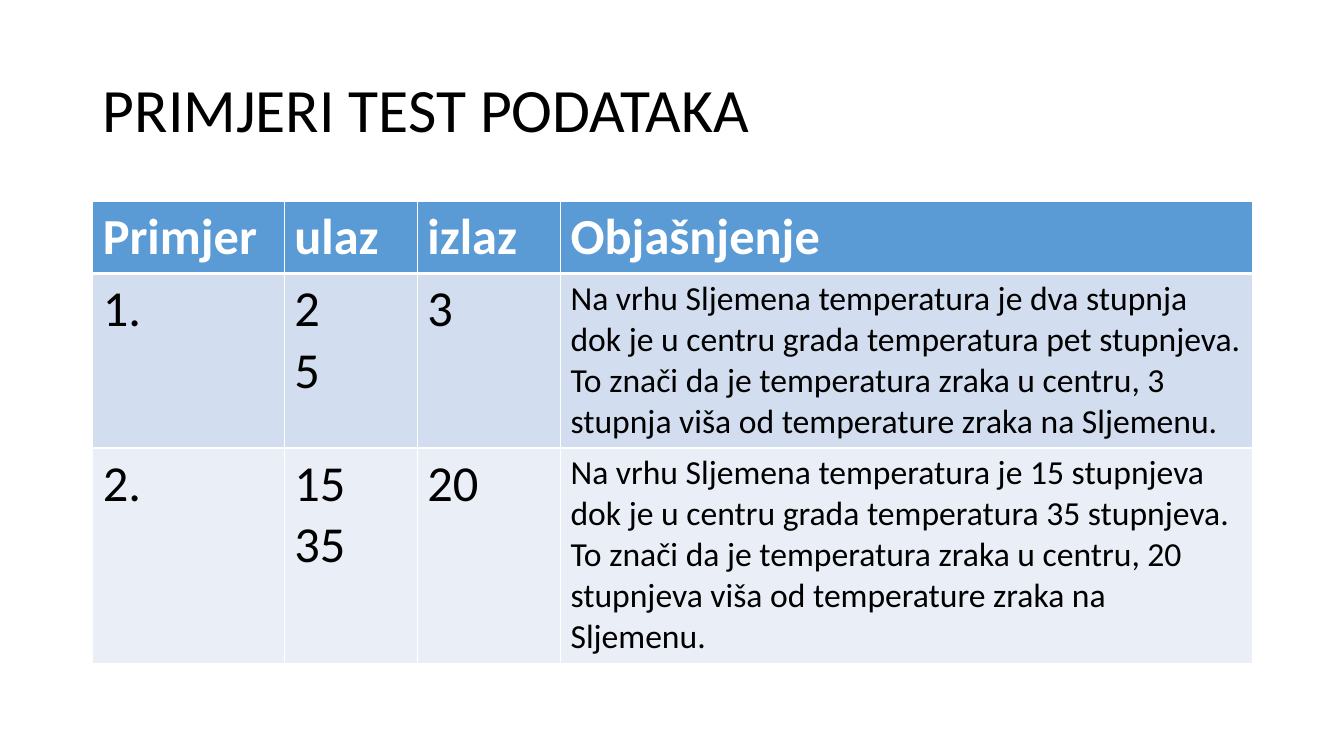
from lxml import etree
from pptx import Presentation
from pptx import util as u
from pptx.dml import color
from pptx.enum import text
from pptx.oxml import ns

COLORS = {
    "ink": "000000",
    "paper": "FFFFFF",
    "header": "5B9BD5",
    "odd": "D2DEEF",
    "even": "EAEFF7",
}
FONT = "Calibri"
SLIDE_SIZE = (13.33, 7.5)
TITLE_BOX = (0.069, 0.053, 0.863, 0.193)
TABLE_BOX = (0.069, 0.267, 0.863, 0.609)
COLUMN_WIDTHS = [1.9, 1.32, 1.42, 6.86]
ROW_HEIGHTS = [0.71, 1.73, 2.13]
EXPLANATION = (
    "Na vrhu Sljemena temperatura je {} dok je u centru grada temperatura {}. "
    "To znači da je temperatura zraka u centru, {} viša od temperature zraka na Sljemenu."
)
ROWS = [
    ["Primjer", "ulaz", "izlaz", "Objašnjenje"],
    ["1.", "2\n5", "3",
     EXPLANATION.format("dva stupnja", "pet stupnjeva", "3 stupnja")],
    ["2.", "15\n35", "20",
     EXPLANATION.format("15 stupnjeva", "35 stupnjeva", "20 stupnjeva")],
]


def rgb(name):
    return color.RGBColor.from_string(COLORS[name])


class SlideBuilder:
    def __init__(self, presentation):
        self.width = presentation.slide_width
        self.height = presentation.slide_height
        self.slide = presentation.slides.add_slide(presentation.slide_layouts[5])

    def box(self, shares):
        sizes = (self.width, self.height) * 2
        return [round(share * size) for share, size in zip(shares, sizes)]

    def fill_text(self, frame, content, ink, paragraph_format=None, **font_format):
        frame.text = content
        for paragraph in frame.paragraphs:
            for name, value in (paragraph_format or {}).items():
                setattr(paragraph, name, value)
            for run in paragraph.runs:
                for name, value in {"name": FONT, **font_format}.items():
                    setattr(run.font, name, value)
                run.font.color.rgb = rgb(ink)

    def title(self, content, shares):
        shape = self.slide.shapes.title
        for name, value in zip(("left", "top", "width", "height"), self.box(shares)):
            setattr(shape, name, value)
        frame = shape.text_frame
        frame_format = {
            "word_wrap": True,
            "auto_size": text.MSO_AUTO_SIZE.NONE,
            "vertical_anchor": text.MSO_ANCHOR.MIDDLE,
        }
        for name, value in frame_format.items():
            setattr(frame, name, value)
        paragraph_format = {"alignment": text.PP_ALIGN.LEFT, "line_spacing": 0.9}
        self.fill_text(frame, content, "ink", paragraph_format, size=u.Pt(44))

    def borders(self, cell, widths):
        properties = cell._tc.get_or_add_tcPr()
        for side, width in widths.items():
            line = etree.SubElement(properties, ns.qn(f"a:ln{side}"), w=str(u.Pt(width)))
            fill = etree.SubElement(line, ns.qn("a:solidFill"))
            etree.SubElement(fill, ns.qn("a:srgbClr"), val=COLORS["paper"])

    def table(self, rows, shares, column_widths, row_heights):
        frame = self.slide.shapes.add_table(len(rows), len(rows[0]), *self.box(shares))
        table = frame.table
        for column, width in zip(table.columns, column_widths):
            column.width = u.Inches(width)
        for row, height in zip(table.rows, row_heights):
            row.height = u.Inches(height)
        for i, contents in enumerate(rows):
            header = i == 0
            fill = "header" if header else ("even", "odd")[i % 2]
            for j, content in enumerate(contents):
                cell = table.cell(i, j)
                self.borders(cell, {"L": 1, "R": 1, "T": 3 if i == 1 else 1,
                                    "B": 3 if header else 1})
                cell.fill.solid()
                cell.fill.fore_color.rgb = rgb(fill)
                explanation = not header and j == len(contents) - 1
                self.fill_text(cell.text_frame, content, "paper" if header else "ink",
                               size=u.Pt(24 if explanation else 36), bold=header)


def main():
    presentation = Presentation()
    presentation.slide_width, presentation.slide_height = map(u.Inches, SLIDE_SIZE)
    builder = SlideBuilder(presentation)
    builder.title("PRIMJERI TEST PODATAKA", TITLE_BOX)
    builder.table(ROWS, TABLE_BOX, COLUMN_WIDTHS, ROW_HEIGHTS)
    presentation.save("out.pptx")


if __name__ == "__main__":
    main()
